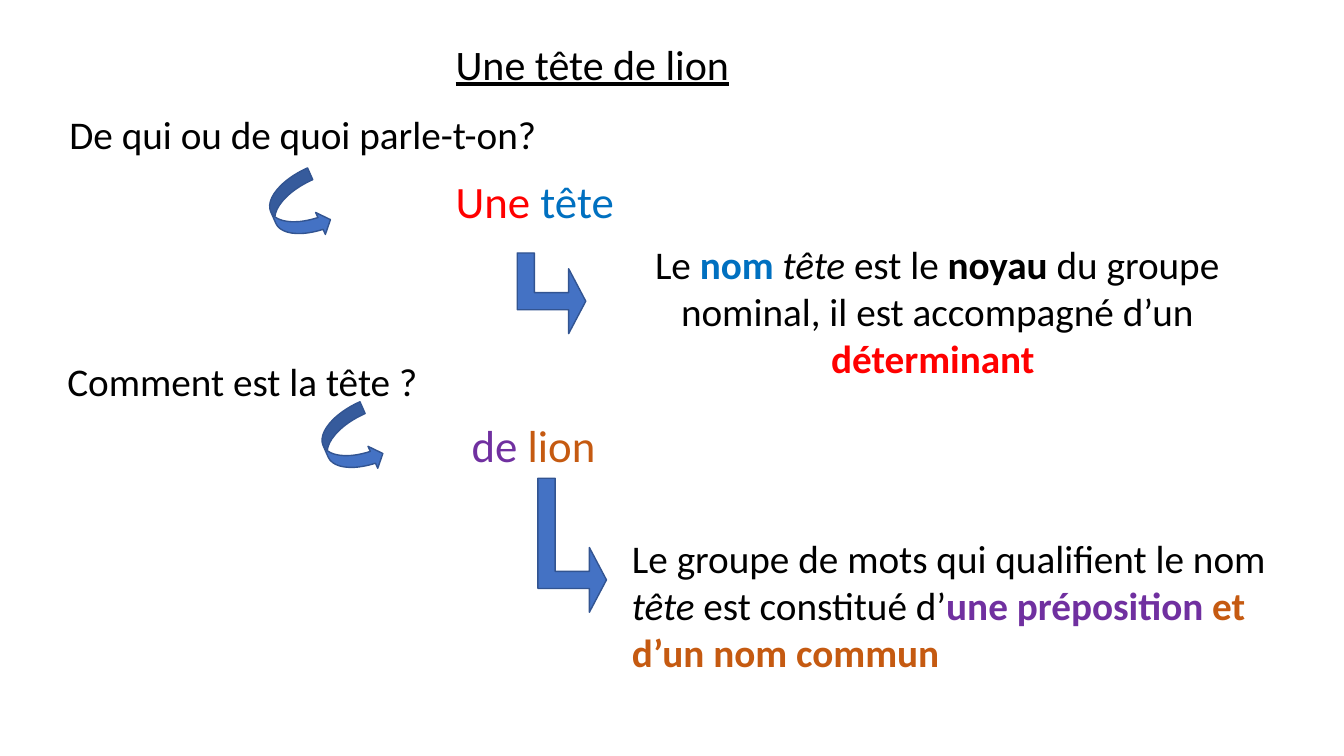
from pptx import Presentation
from pptx import util as u
from pptx.dml.color import RGBColor
from pptx.enum import shapes, text

PX = 9144  # EMU per px, 100 px to the inch
FONT = "Calibri"
BLACK = RGBColor(0, 0, 0)
RED = RGBColor(0xFF, 0, 0)
BLUE = RGBColor(0, 0x70, 0xC0)
PURPLE = RGBColor(0x70, 0x30, 0xA0)
BROWN = RGBColor(0xC5, 0x5A, 0x11)
FILL = RGBColor(0x44, 0x72, 0xC4)
EDGE = RGBColor(0x32, 0x54, 0x91)
KIND = shapes.MSO_SHAPE
ALIGN = text.PP_ALIGN


def emu(box):
    return [n * PX for n in box]


def shift(origin, box):
    """Move a box given relative to a corner onto the slide."""
    return (origin[0] + box[0], origin[1] + box[1], box[2], box[3])


def label(slide, box, runs, size, wrap=False, align=ALIGN.LEFT):
    """Runs are (words, colour, style letters b, i or u)."""
    frame = slide.shapes.add_textbox(*emu(box)).text_frame
    frame.word_wrap = wrap
    frame.auto_size = text.MSO_AUTO_SIZE.SHAPE_TO_FIT_TEXT
    para = frame.paragraphs[0]
    para.alignment = align
    for words, color, style in runs:
        run = para.add_run()
        run.text = words
        font = run.font
        font.name, font.size = FONT, u.Pt(size)
        font.color.rgb = color
        font.bold = "b" in style
        font.italic = "i" in style
        font.underline = "u" in style


def arrow(slide, kind, box, turn, adjust):
    shape = slide.shapes.add_shape(kind, *emu(box))
    shape.rotation = turn
    for i, value in enumerate(adjust):
        shape.adjustments[i] = value
    shape.shadow.inherit = False
    shape.fill.solid()
    shape.fill.fore_color.rgb = FILL
    shape.line.color.rgb = EDGE
    shape.line.width = u.Pt(1)


def title(slide, box):
    label(slide, box, [("Une tête de lion", BLACK, "u")], 30)


def step(slide, box, ask, reply, note, curve, bend, align=ALIGN.LEFT):
    """Question, reply and note, joined by two arrows."""
    label(slide, box, [(ask, BLACK, "")], 28)
    arrow(slide, KIND.CURVED_RIGHT_ARROW, shift(box, (*curve, 51, 68)),
          336.1, (0.25, 0.466, 0.207))
    spot, words = reply
    label(slide, shift(box, spot), words, 32)
    arrow(slide, KIND.BENT_UP_ARROW, shift(box, bend), 90,
          (0.25, 0.473, 0.25))
    spot, words = note
    label(slide, shift(box, spot), words, 28, True, align)


def main():
    deck = Presentation()
    deck.slide_width, deck.slide_height = emu((1333, 750))
    slide = deck.slides.add_slide(deck.slide_layouts[6])

    title(slide, (442, 33, 294, 61))

    # The head noun and its determiner
    step(slide, (59, 105, 490, 57), "De qui ou de quoi parle-t-on?",
         ((383, 62, 179, 64), [("Une ", RED, ""), ("tête", BLUE, "")]),
         ((508, 128, 725, 151), [
             ("Le ", BLACK, ""), ("nom ", BLUE, "b"), ("tête ", BLACK, "i"),
             ("est le", BLACK, ""), (" noyau ", BLACK, "b"),
             ("du groupe nominal, il est accompagné d’un ", BLACK, ""),
             ("déterminant ", RED, "b")]),
         curve=(211, 69), bend=(448, 152, 80, 68), align=ALIGN.CENTER)

    # The words that qualify the noun
    step(slide, (57, 350, 371, 57), "Comment est la tête ?",
         ((401, 59, 175, 64), [("de", PURPLE, ""), (" lion", BROWN, "")]),
         ((560, 175, 667, 151), [
             ("Le groupe de mots qui qualifient le nom ", BLACK, ""),
             ("tête ", BLACK, "i"), ("est constitué d’", BLACK, ""),
             ("une préposition ", PURPLE, "b"),
             ("et d’un nom commun", BROWN, "b")]),
         curve=(265, 56), bend=(444, 157, 133, 68))

    deck.save("out.pptx")


if __name__ == "__main__":
    main()
